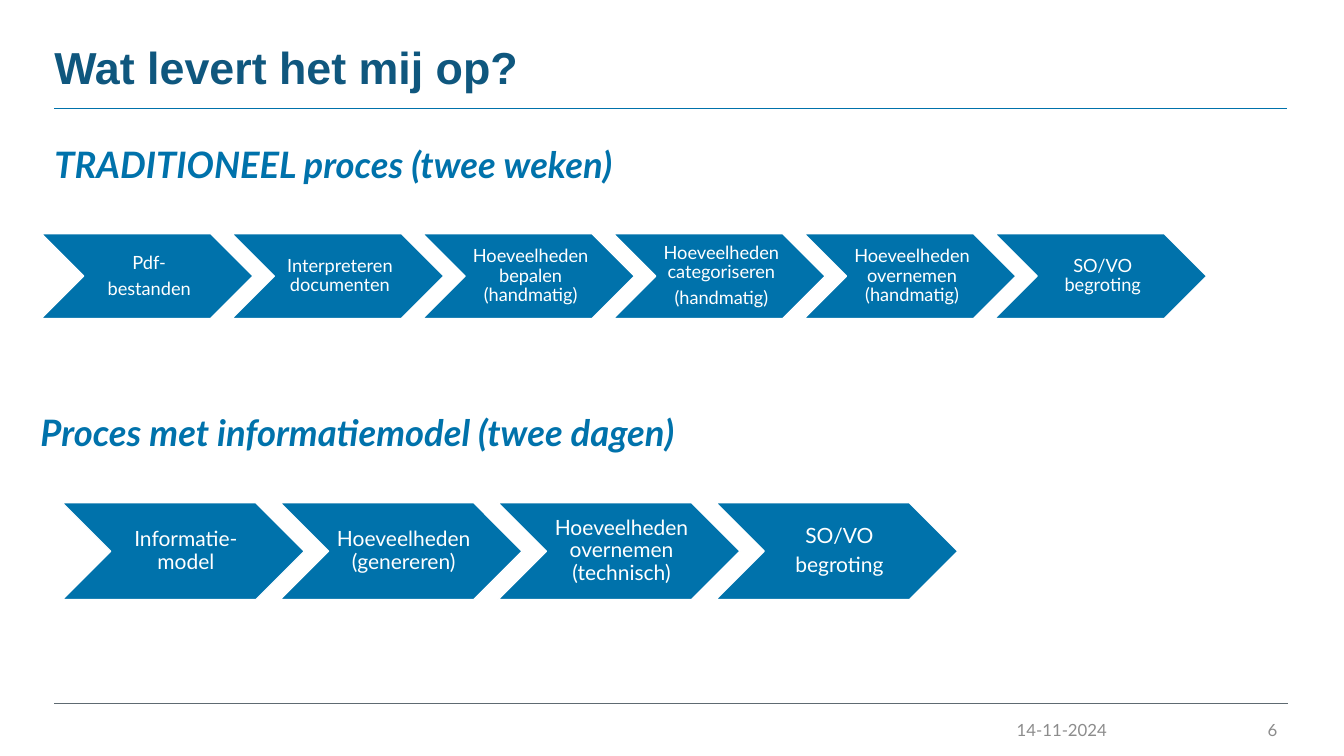
from lxml import etree
from pptx import Presentation
from pptx.dml.color import RGBColor
from pptx.enum import shapes, text
from pptx.oxml import ns
from pptx.util import Cm, Pt

# Content
TITLE = "Wat levert het mij op?"
DATE, PAGE = "14-11-2024", "6"
BLUE, NAVY, SLATE, GREY, WHITE = "0072AB", "0F577E", "5E6A71", "8C8C8C", "FFFFFF"

# Each step is a list of paragraphs; lengths are in cm
PROCESSES = [
    dict(heading="TRADITIONEEL proces (twee weken)", heading_at=(1.37, 3.02),
         left=1.04, top=5.89, step_width=5.34, size=13, inset=0.15,
         steps=[["Pdf-", "bestanden"],
                ["Interpreteren documenten"],
                ["Hoeveelheden bepalen (handmatig)"],
                ["Hoeveelheden categoriseren", "(handmatig)"],
                ["Hoeveelheden overnemen (handmatig)"],
                ["SO/VO begroting"]]),
    dict(heading="Proces met informatiemodel (twee dagen)", heading_at=(1.02, 9.78),
         left=1.57, top=12.67, step_width=6.1, size=15, inset=0.18,
         steps=[["Informatie-model"],
                ["Hoeveelheden (genereren)"],
                ["Hoeveelheden overnemen (technisch)"],
                ["SO/VO", "begroting"]]),
]
RULES = [(2.72, 32.44, BLUE), (17.73, 32.46, SLATE)]  # y, right end, colour
RULE_LEFT = 1.37

# Chevron proportions relative to the step width
PITCH, HEIGHT = 0.9, 0.4

prs = Presentation()
prs.slide_width, prs.slide_height = Cm(33.87), Cm(19.05)
slide = prs.slides.add_slide(prs.slide_layouts[6])


def rgb(value):
    return RGBColor.from_string(value)


def write(shape, lines, size, color, font="Lato", bold=False, italic=False,
          align=text.PP_ALIGN.LEFT, anchor=text.MSO_ANCHOR.MIDDLE,
          insets=(0, 0, 0, 0), line_spacing=1.0, space_after=0):
    frame = shape.text_frame
    frame.word_wrap = True
    frame.vertical_anchor = anchor
    (frame.margin_left, frame.margin_top,
     frame.margin_right, frame.margin_bottom) = map(Cm, insets)
    frame.text = "\n".join(lines)
    for paragraph in frame.paragraphs:
        paragraph.alignment = align
        paragraph.line_spacing = line_spacing
        paragraph.space_after = Pt(space_after)
        paragraph.font.name, paragraph.font.size = font, Pt(size)
        paragraph.font.bold, paragraph.font.italic = bold, italic
        paragraph.font.color.rgb = rgb(color)


def add_text(left, top, width, height, content, size, color, **style):
    box = slide.shapes.add_textbox(Cm(left), Cm(top), Cm(width), Cm(height))
    write(box, [content], size, color, **style)


# Rules
for y, right, color in RULES:
    rule = slide.shapes.add_connector(shapes.MSO_CONNECTOR.STRAIGHT,
                                      Cm(RULE_LEFT), Cm(y), Cm(right), Cm(y))
    rule.line.color.rgb = rgb(color)
    rule.line.width = Pt(0.25)
    etree.SubElement(rule._element.spPr, ns.qn("a:effectLst"))

# Title
add_text(1.37, 0.94, 22.76, 1.5, TITLE, 32, NAVY, font="Arial", bold=True)

# Processes
for process in PROCESSES:
    add_text(*process["heading_at"], 31.12, 1.27, process["heading"], 26, BLUE,
             bold=True, italic=True, anchor=text.MSO_ANCHOR.TOP, line_spacing=1.5)
    width, size = process["step_width"], process["size"]
    for i, lines in enumerate(process["steps"]):
        step = slide.shapes.add_shape(
            shapes.MSO_SHAPE.CHEVRON, Cm(process["left"] + i * PITCH * width),
            Cm(process["top"]), Cm(width), Cm(HEIGHT * width))
        step.shadow.inherit = False
        step.fill.solid()
        step.fill.fore_color.rgb = rgb(BLUE)
        step.line.color.rgb = rgb(WHITE)
        step.line.width = Pt(1)
        write(step, lines, size, WHITE, align=text.PP_ALIGN.CENTER,
              insets=(process["inset"], 0.05, 0.05, 0.05),
              line_spacing=0.9, space_after=round(0.35 * size, 1))

# Footer
FOOTER_INSETS = (0.25, 0.13, 0.25, 0.13)
add_text(24.13, 18.01, 5.26, 0.76, DATE, 12, GREY,
         align=text.PP_ALIGN.CENTER, insets=FOOTER_INSETS)
add_text(30.28, 18.01, 2.16, 0.76, PAGE, 12, GREY,
         align=text.PP_ALIGN.RIGHT, insets=FOOTER_INSETS)

prs.save("out.pptx")
